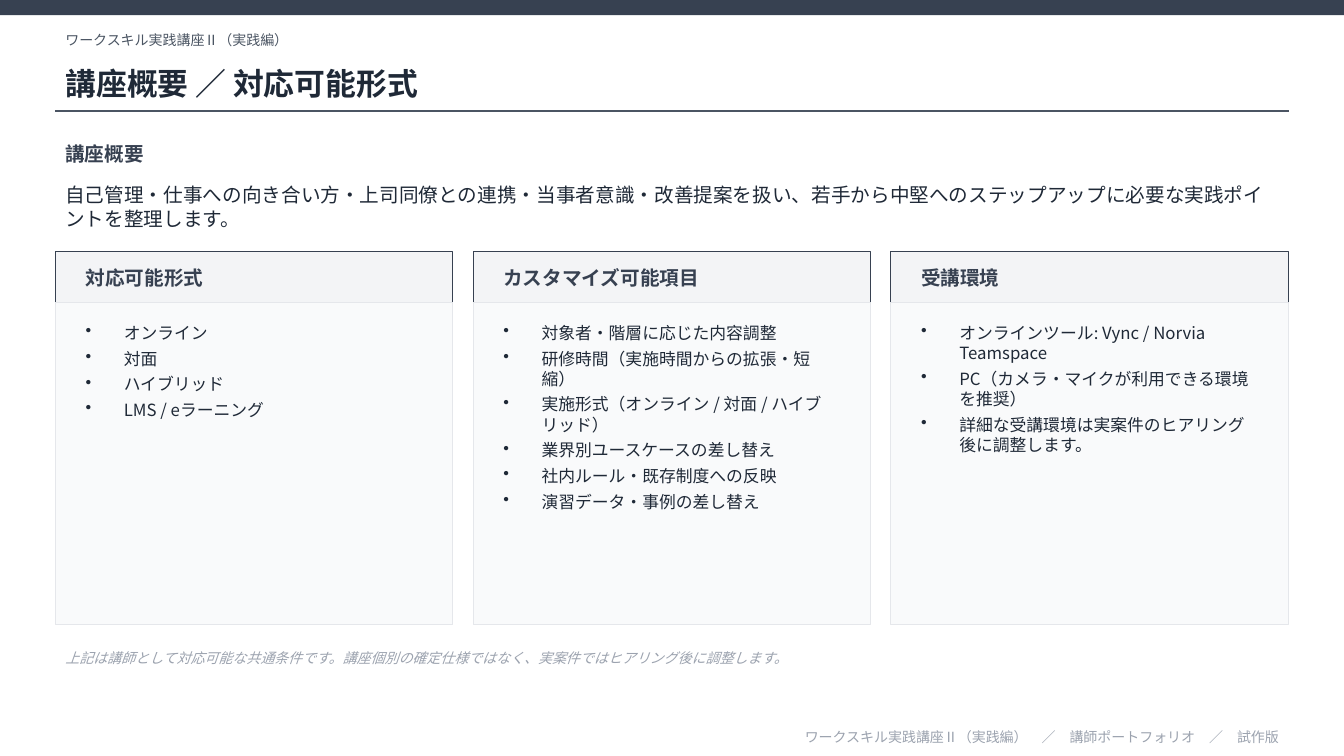
from pptx import Presentation
from pptx.dml.color import RGBColor as RGB
from pptx.enum.shapes import MSO_CONNECTOR as CONN, MSO_SHAPE as SHAPE
from pptx.enum.text import MSO_ANCHOR as ANCHOR, MSO_AUTO_SIZE as AUTO, PP_ALIGN as ALIGN
from pptx.oxml.ns import qn
from pptx.util import Inches, Pt
from lxml.etree import SubElement

COURSE = "ワークスキル実践講座Ⅱ（実践編）"
TITLE = "講座概要 ／ 対応可能形式"
HEADING = "講座概要"
SUMMARY = ("自己管理・仕事への向き合い方・上司同僚との連携・当事者意識・改善提案を扱い、"
           "若手から中堅へのステップアップに必要な実践ポイントを整理します。")
CARDS = [
    ("対応可能形式", ["オンライン", "対面", "ハイブリッド", "LMS / eラーニング"]),
    ("カスタマイズ可能項目", [
        "対象者・階層に応じた内容調整",
        "研修時間（実施時間からの拡張・短縮）",
        "実施形式（オンライン / 対面 / ハイブリッド）",
        "業界別ユースケースの差し替え",
        "社内ルール・既存制度への反映",
        "演習データ・事例の差し替え",
    ]),
    ("受講環境", [
        "オンラインツール: Vync / Norvia Teamspace",
        "PC（カメラ・マイクが利用できる環境を推奨）",
        "詳細な受講環境は実案件のヒアリング後に調整します。",
    ]),
]
NOTE = ("上記は講師として対応可能な共通条件です。"
        "講座個別の確定仕様ではなく、実案件ではヒアリング後に調整します。")
FOOTER = "　／　".join([COURSE, "講師ポートフォリオ", "試作版"])

FONT = "Noto Sans CJK JP"
COLORS = {"ink": "1F2937", "slate": "374151", "gray": "4B5563", "muted": "9CA3AF",
          "head": "F3F4F6", "body": "F9FAFB", "border": "E5E7EB"}
STYLES = {
    "course": dict(size=10, color="gray"),
    "title": dict(size=22, color="ink", bold=True),
    "heading": dict(size=14, color="slate", bold=True),
    "summary": dict(size=14, color="ink"),
    "item": dict(size=12, color="ink"),
    "note": dict(size=10, color="muted", italic=True),
    "footer": dict(size=10, color="muted"),
}

WIDTH, HEIGHT = 13.33, 7.5
MARGIN, GAP, PAD = 0.55, 0.2, 0.2
INNER = WIDTH - 2 * MARGIN
CARD_W = (INNER - GAP * (len(CARDS) - 1)) / len(CARDS)
CARD_TOP, HEAD_H, BODY_H = 2.5, 0.5, 3.2
INDENT = 0.38

prs = Presentation()
prs.slide_width, prs.slide_height = Inches(WIDTH), Inches(HEIGHT)
slide = prs.slides.add_slide(prs.slide_layouts[5])


def add_rect(x, y, w, h, fill, line=None):
    s = slide.shapes.add_shape(SHAPE.RECTANGLE, *map(Inches, (x, y, w, h)))
    s.shadow.inherit = False
    s.fill.solid()
    s.fill.fore_color.rgb = RGB.from_string(COLORS[fill])
    if line:
        s.line.color.rgb = RGB.from_string(COLORS[line])
        s.line.width = Pt(0.75)
    else:
        s.line.fill.background()


def add_bullet(p):
    pPr = p._p.get_or_add_pPr()
    pPr.set("marL", str(Inches(INDENT)))
    pPr.set("indent", str(-Inches(INDENT)))
    SubElement(pPr, qn("a:buChar")).set("char", "•")
    p.space_after = Pt(4)


def write(s, lines, style, anchor=ANCHOR.MIDDLE, align=ALIGN.LEFT, bullets=False):
    tf = s.text_frame
    for name, value in dict(word_wrap=True, auto_size=AUTO.NONE, vertical_anchor=anchor).items():
        setattr(tf, name, value)
    for i, line in enumerate(lines):
        p = tf.add_paragraph() if i else tf.paragraphs[0]
        p.alignment = align
        if bullets:
            add_bullet(p)
        r = p.add_run()
        r.text = line
        values = dict(STYLES[style], name=FONT)
        values["size"] = Pt(values["size"])
        r.font.color.rgb = RGB.from_string(COLORS[values.pop("color")])
        for name, value in values.items():
            setattr(r.font, name, value)
        SubElement(r._r.get_or_add_rPr(), qn("a:ea")).set("typeface", FONT)


def add_text(x, y, w, h, lines, style, **options):
    s = slide.shapes.add_textbox(*map(Inches, (x, y, w, h)))
    write(s, lines, style, **options)


add_rect(0, 0, WIDTH, 0.15, "slate")
add_text(MARGIN, 0.25, INNER, 0.3, [COURSE], "course")

title = slide.shapes.title
for name, value in dict(left=MARGIN, top=0.55, width=INNER, height=0.55).items():
    setattr(title, name, Inches(value))
write(title, [TITLE], "title")

rule = slide.shapes.add_connector(
    CONN.STRAIGHT, *map(Inches, (MARGIN, 1.1, MARGIN + INNER, 1.1)))
rule.line.color.rgb = RGB.from_string(COLORS["gray"])
rule.line.width = Pt(1)
SubElement(rule._element.spPr, qn("a:effectLst"))

add_text(MARGIN, 1.35, INNER, 0.35, [HEADING], "heading")
add_text(MARGIN, 1.75, INNER, 0.6, [SUMMARY], "summary")

for i, (heading, items) in enumerate(CARDS):
    x = MARGIN + i * (CARD_W + GAP)
    body_top = CARD_TOP + HEAD_H
    text_w = CARD_W - 2 * PAD
    add_rect(x, CARD_TOP, CARD_W, HEAD_H, "head", "slate")
    add_text(x + PAD, CARD_TOP, text_w, HEAD_H, [heading], "heading")
    add_rect(x, body_top, CARD_W, BODY_H, "body", "border")
    add_text(x + PAD, body_top + 0.15, text_w, BODY_H - 0.35, items, "item",
             anchor=ANCHOR.TOP, bullets=True)

add_text(MARGIN, 6.35, INNER, 0.35, [NOTE], "note")
add_text(MARGIN, 7.2, INNER, 0.22, [FOOTER], "footer", align=ALIGN.RIGHT)

prs.save("out.pptx")
